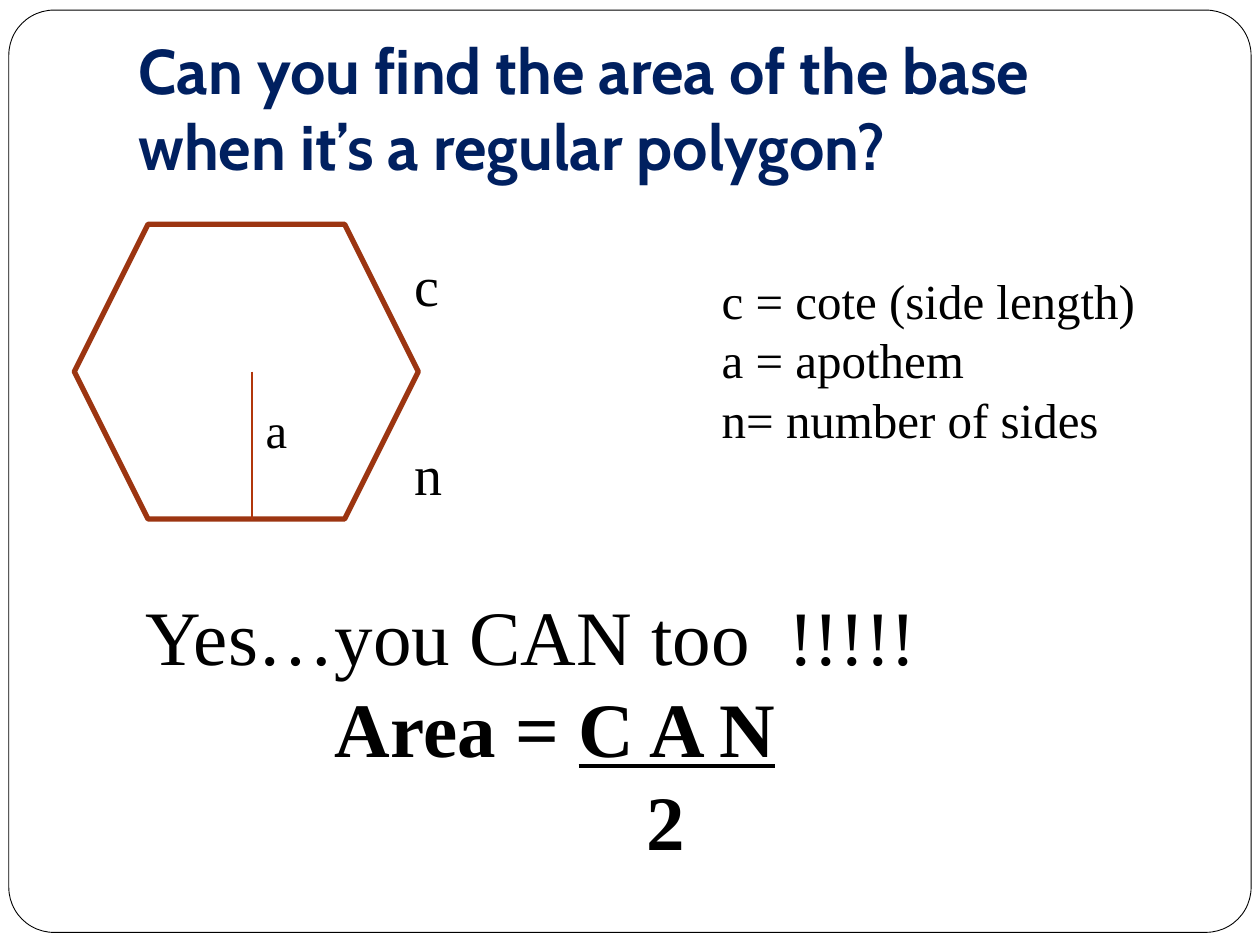
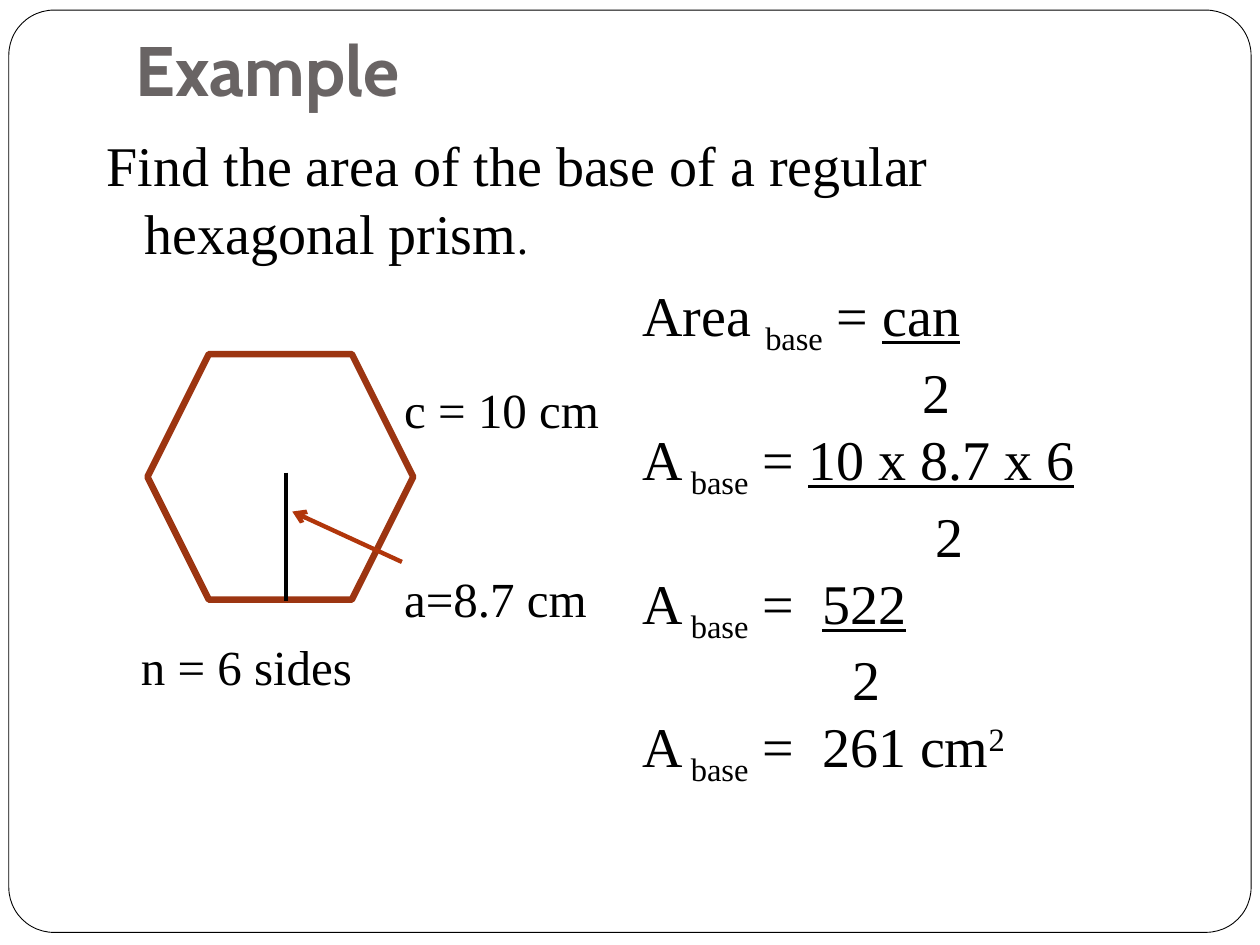
from lxml import etree
from pptx import Presentation
from pptx.dml.color import RGBColor
from pptx.enum.shapes import MSO_CONNECTOR, MSO_SHAPE
from pptx.enum.text import MSO_ANCHOR
from pptx.oxml.ns import qn
from pptx.util import Inches, Pt

LINE = MSO_CONNECTOR.STRAIGHT
FRAME = MSO_SHAPE.ROUNDED_RECTANGLE
HEXAGON = MSO_SHAPE.HEXAGON
BOTTOM = MSO_ANCHOR.BOTTOM

BLACK, WHITE = "000000", "FFFFFF"
NAVY, GREY = "002060", "696464"
RUST, BRICK = "9C3511", "B1360B"
HEAD, BODY = "Cabin", "Times New Roman"

rgb = RGBColor.from_string


def add_text(slide, at, paras, size, font=BODY, color=BLACK, bold=False):
    """Each para is (indent in inches, runs); a run is (text, changes)."""
    box = slide.shapes.add_textbox(*map(Inches, at))
    frame = box.text_frame
    frame.word_wrap = True
    for i, (indent, runs) in enumerate(paras):
        para = frame.paragraphs[0] if i == 0 else frame.add_paragraph()
        if indent:
            para._p.get_or_add_pPr().set("marL", str(Inches(indent)))
        for text, change in runs:
            run = para.add_run()
            run.text = text
            run.font.name = font
            run.font.size = Pt(change.get("size", size))
            run.font.bold = change.get("bold", bold)
            run.font.underline = change.get("under", False)
            run.font.color.rgb = rgb(color)
            if "base" in change:
                run._r.get_or_add_rPr().set("baseline", str(change["base"] * 1000))
    return frame


def add_line(slide, start, end, color, width, arrow=False):
    line = slide.shapes.add_connector(LINE, *map(Inches, start + end))
    line.line.color.rgb = rgb(color)
    line.line.width = Pt(width)
    if arrow:
        etree.SubElement(line.line._get_or_add_ln(), qn("a:tailEnd"), type="arrow")
    etree.SubElement(line._element.spPr, qn("a:effectLst"))


prs = Presentation()
prs.slide_width, prs.slide_height = Inches(10), Inches(7.5)

# Frame, title and hexagon on both slides
pages = [
    ("Can you find the area of the base when it’s a regular polygon?",
     (1, 0.3, 8.5, 1.25), 36, NAVY, (0.59, 1.78, 2.73, 2.34), 3),
    ("Example", (0.98, -0.27, 8.5, 1.25), 40, GREY, (1.17, 2.81, 2.11, 1.95), 3.75),
]
slides = []
for title, spot, size, color, hexagon, width in pages:
    slide = prs.slides.add_slide(prs.slide_layouts[6])
    slides.append(slide)
    outlines = [(FRAME, (0.07, 0.08, 9.86, 7.32), BLACK, 0.5),
                (HEXAGON, hexagon, RUST, width)]
    for kind, at, ink, weight in outlines:
        shape = slide.shapes.add_shape(kind, *map(Inches, at))
        shape.shadow.inherit = False
        shape.line.color.rgb = rgb(ink)
        shape.line.width = Pt(weight)
        if kind == FRAME:
            shape.adjustments[0] = 0.049
            shape.fill.solid()
            shape.fill.fore_color.rgb = rgb(WHITE)
        else:
            shape.fill.background()
    head = add_text(slide, spot, [(0, [(title, {})])], size, HEAD, color, True)
    head.vertical_anchor = BOTTOM
    head.margin_bottom = Inches(0.1)

rule, example = slides

# Single-line labels
labels = [
    (rule, "c", (3.19, 1.94, 0.65, 0.64), 32, {}),
    (rule, "n", (3.19, 3.44, 0.87, 0.64), 32, {}),
    (rule, "a", (2.01, 3.04, 0.47, 0.91), 48, {"base": 30}),
    (example, "c = 10 cm", (3.11, 2.96, 1.88, 0.57), 28, {}),
    (example, "a=8.7 cm", (3.11, 4.46, 1.88, 0.57), 28, {}),
    (example, "n = 6 sides", (1.02, 5, 1.88, 0.57), 28, {}),
]
terms = ["c = cote (side length)", "a = apothem", "n= number of sides"]
for i, term in enumerate(terms):
    labels.append((rule, term, (5.63, 2.1 + 0.47 * i, 4.17, 0.57), 28, {}))
for slide, text, at, size, change in labels:
    add_text(slide, at, [(0, [(text, change)])], size)

# Rule: apothem and formula
add_line(rule, (2, 2.95), (2, 4.13), BRICK, 0.75)
bold = {"bold": True}
add_text(rule, (1.06, 4.62, 8.05, 2.32), [
    (0, [("Yes…you CAN too  !!!!!", {})]),
    (1.5, [("Area = ", bold), ("C A N", {"bold": True, "under": True})]),
    (3.97, [("2", bold)]),
], 44)

# Example: task, apothem, pointer and working
task = add_text(example, (0.75, 0.99, 8.5, 1.3), [
    (0.3, [("Find the area of the base of a regular hexagonal prism", {}),
           (".", {"size": 26})]),
], 32)
task.paragraphs[0].space_before = Pt(5.8)
task.paragraphs[0]._p.get_or_add_pPr().set("indent", str(Inches(-0.3)))

add_line(example, (2.27, 3.75), (2.27, 4.77), BLACK, 2)
add_line(example, (3.19, 4.46), (2.32, 4.06), BRICK, 2.5, arrow=True)

steps = [
    ("Area ", "base", " = ", "can", 2.22),
    ("A", " base", " = ", "10 x 8.7 x 6", 2.33),
    ("A", " base", " =  ", "522", 1.67),
]
work = []
for name, sub, sign, top, indent in steps:
    work.append((0, [(name, {}), (sub, {"base": -25}), (sign, {}),
                     (top, {"under": True})]))
    work.append((indent, [("2", {})]))
work.append((0, [("A", {}), (" base", {"base": -25}), (" =  261 cm", {}),
                 ("2", {"base": 30})]))
add_text(example, (5, 2.18, 4.09, 3.87), work, 32)

prs.save("out.pptx")
